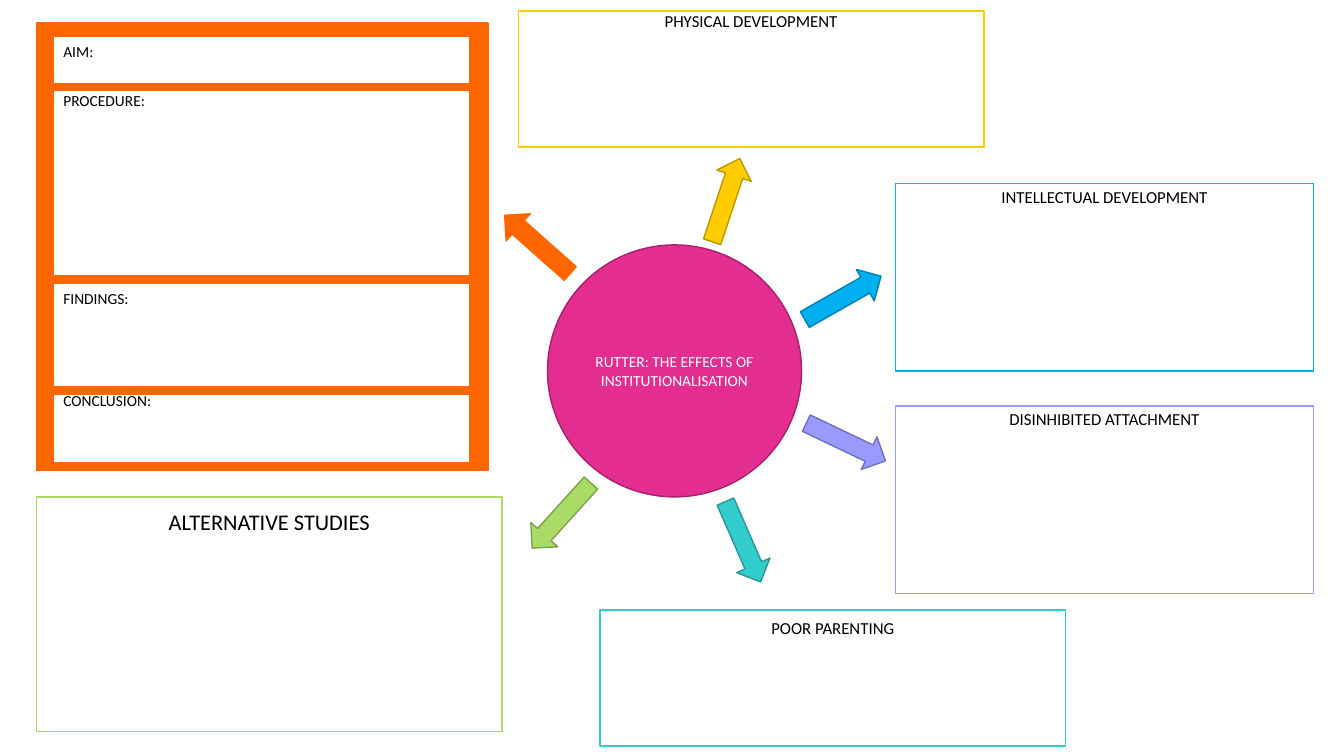
from pptx import Presentation
from pptx.dml.color import RGBColor
from pptx.enum.shapes import MSO_SHAPE
from pptx.enum.text import MSO_ANCHOR, PP_ALIGN
from pptx.util import Inches, Pt

COLOURS = {
    "white": "FFFFFF", "black": "000000",
    "pink": "E32D91", "dark pink": "A8216B",
    "orange": "FF6600",
    "green": "A9DB66", "dark green": "7DA24B",
    "blue": "00B0F0", "dark blue": "0082B2",
    "teal": "33CCCC", "dark teal": "269797",
    "violet": "9999FF", "dark violet": "7171BD",
    "yellow": "FFCC00", "dark yellow": "BD9700",
}

ARROW_SIZE = (0.36, 0.87)
ARROWS = [
    (5.15, 1.99, 131.6, "orange", "orange"),
    (5.39, 4.68, 42.1, "green", "dark green"),
    (8.18, 2.52, 240.4, "blue", "dark blue"),
    (7.19, 4.94, 336.4, "teal", "dark teal"),
    (8.21, 3.95, 295.5, "violet", "dark violet"),
    (7.02, 1.55, 198.4, "yellow", "dark yellow"),
]

TOPICS = [
    ("ALTERNATIVE STUDIES", (0.36, 4.93, 4.62, 2.33), "green", 16, 0.11),
    ("PHYSICAL DEVELOPMENT", (5.14, 0.11, 4.62, 1.35), "yellow", 12, 0),
    ("INTELLECTUAL DEVELOPMENT", (8.88, 1.82, 4.15, 1.86), "blue", 12, 0.03),
    ("DISINHIBITED ATTACHMENT", (8.88, 4.03, 4.15, 1.86), "violet", 12, 0.03),
    ("POOR PARENTING", (5.95, 6.05, 4.62, 1.35), "teal", 12, 0.08),
]

STUDY_PARTS = [
    ("AIM:", 0.47, 0.06),
    ("PROCEDURE:", 1.84, 0),
    ("FINDINGS:", 1.03, 0.06),
    ("CONCLUSION:", 0.68, -0.03),
]


def colour(name):
    return RGBColor.from_string(COLOURS[name])


def add_block(page, kind, box, fill, line):
    block = page.shapes.add_shape(kind, *[Inches(length) for length in box])
    block.shadow.inherit = False
    block.fill.solid()
    block.fill.fore_color.rgb = colour(fill)
    block.line.color.rgb = colour(line)
    block.line.width = Pt(1)
    return block


def write(block, text, size, ink, align, anchor, top=0.05):
    frame = block.text_frame
    frame.word_wrap = True
    frame.vertical_anchor = anchor
    frame.margin_top = Inches(top)
    para = frame.paragraphs[0]
    para.alignment = align
    span = para.add_run()
    span.text = text
    span.font.name = "Calibri"
    span.font.size = Pt(size)
    span.font.color.rgb = colour(ink)


def add_hub(page, box):
    hub = add_block(page, MSO_SHAPE.OVAL, box, "pink", "dark pink")
    write(hub, "RUTTER: THE EFFECTS OF INSTITUTIONALISATION", 11, "white",
          PP_ALIGN.CENTER, MSO_ANCHOR.MIDDLE)


def add_arrow(page, box, angle, fill, line):
    arrow = add_block(page, MSO_SHAPE.DOWN_ARROW, box, fill, line)
    arrow.rotation = angle


def add_topic(page, box, title, line, size, top):
    topic = add_block(page, MSO_SHAPE.RECTANGLE, box, "white", line)
    write(topic, title, size, "black", PP_ALIGN.CENTER, MSO_ANCHOR.TOP, top)


def add_study(page, box):
    left, top, width, height = box
    add_block(page, MSO_SHAPE.RECTANGLE, box, "orange", "orange")
    part_top = top + 0.13
    for label, part_height, inset in STUDY_PARTS:
        part_box = (left + 0.17, part_top, width - 0.35, part_height)
        part = add_block(page, MSO_SHAPE.RECTANGLE, part_box, "white", "orange")
        write(part, label, 11, "black", PP_ALIGN.LEFT, MSO_ANCHOR.TOP, inset)
        part_top += part_height + 0.07


def main():
    deck = Presentation()
    deck.slide_width = Inches(13.33)
    deck.slide_height = Inches(7.5)
    page = deck.slides.add_slide(deck.slide_layouts[6])
    add_hub(page, (5.43, 2.43, 2.52, 2.5))
    for left, top, angle, fill, line in ARROWS:
        add_arrow(page, (left, top, *ARROW_SIZE), angle, fill, line)
    for title, box, line, size, top in TOPICS:
        add_topic(page, box, title, line, size, top)
    add_study(page, (0.36, 0.23, 4.48, 4.44))
    deck.save("out.pptx")


if __name__ == "__main__":
    main()
